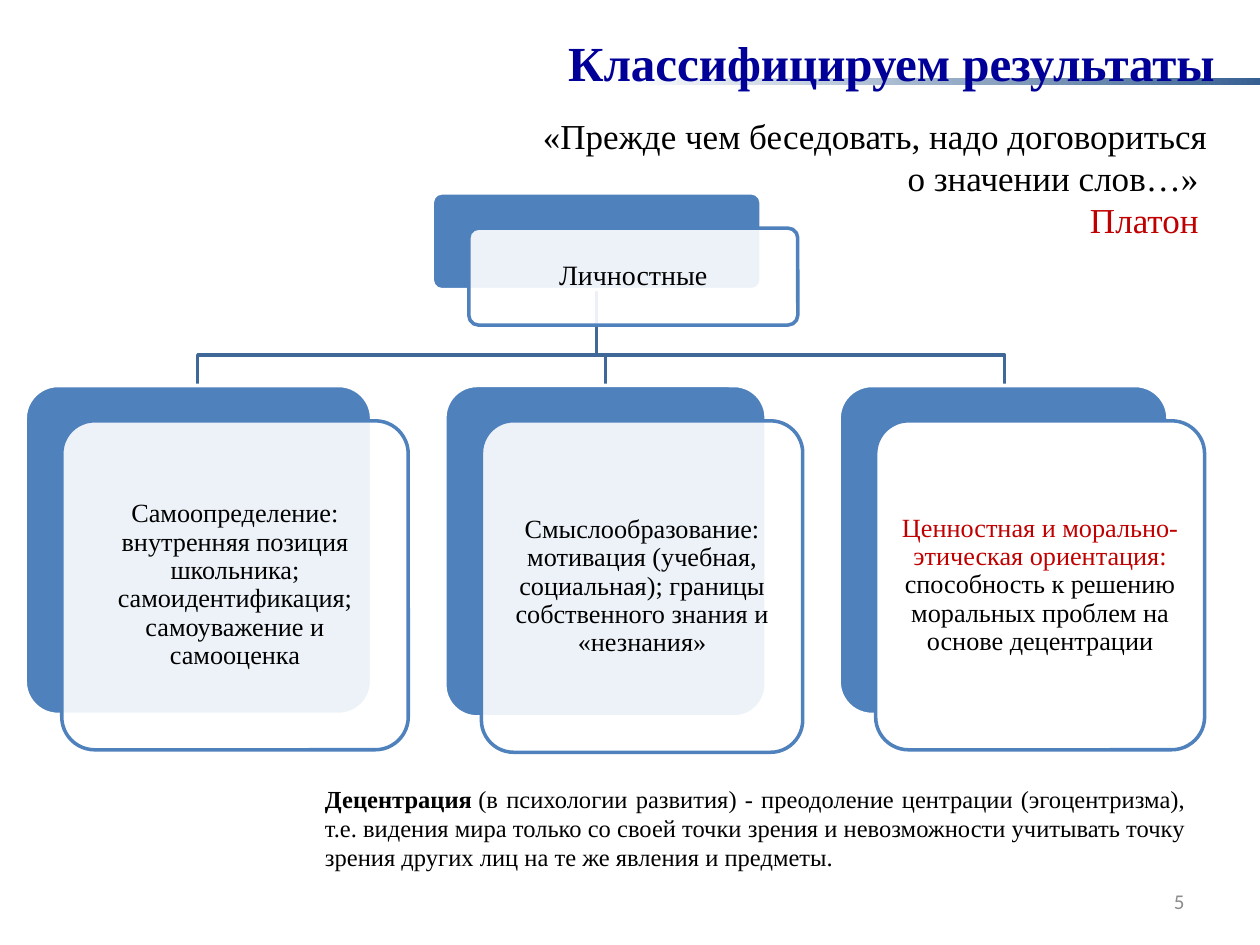
from pptx import Presentation
from pptx.dml.color import RGBColor
from pptx.enum.shapes import MSO_SHAPE
from pptx.enum.text import MSO_ANCHOR, PP_ALIGN
from pptx.oxml.ns import qn
from pptx.util import Pt
from lxml.etree import SubElement

COLORS = {
    "blue": "4F81BD", "connector": "3F6797", "bar": "376092", "white": "FFFFFF",
    "black": "000000", "red": "C00000", "navy": "000099", "grey": "8C8C8C",
}
SERIF = "Times New Roman"


def write(frame, paragraphs, size, align, font=SERIF, line_spacing=None):
    """Fill a text frame; each paragraph is a list of (text, colour, bold) runs."""
    frame.word_wrap = True
    for index, runs in enumerate(paragraphs):
        paragraph = frame.paragraphs[0] if index == 0 else frame.add_paragraph()
        paragraph.alignment = align
        paragraph.line_spacing = line_spacing
        for text, color, bold in runs:
            run = paragraph.add_run()
            run.text = text
            run.font.name = font
            run.font.size = Pt(size)
            run.font.bold = bold
            run.font.color.rgb = RGBColor.from_string(COLORS[color])


def add_panel(left, top, width, height, fill, line):
    shape = slide.shapes.add_shape(
        MSO_SHAPE.ROUNDED_RECTANGLE, Pt(left), Pt(top), Pt(width), Pt(height))
    shape.adjustments[0] = 0.1
    shape.shadow.inherit = False
    shape.fill.solid()
    shape.fill.fore_color.rgb = RGBColor.from_string(COLORS[fill])
    shape.line.color.rgb = RGBColor.from_string(COLORS[line])
    shape.line.width = Pt(2)
    return shape


presentation = Presentation()
presentation.slide_width = Pt(720)
presentation.slide_height = Pt(540)
slide = presentation.slides.add_slide(presentation.slide_layouts[6])

# Diagram: the root card first, then its three children
# (left, top, width, height, text size, inset, see-through, runs)
cards = [
    (247, 110.2, 188, 55.4, 16, 5, True, [("Личностные", "black", False)]),
    (14.4, 220.3, 198, 188, 15, 4.3, True, [
        ("Самоопределение: внутренняя позиция школьника; самоидентификация; "
         "самоуважение и самооценка", "black", False)]),
    (254.2, 220.3, 183.6, 189.4, 15, 4.3, True, [
        ("Смыслообразование: мотивация (учебная, социальная); границы "
         "собственного знания и «незнания»", "black", False)]),
    (479.5, 220.3, 188, 188, 15, 4.3, False, [
        ("Ценностная и морально-этическая ориентация: ", "red", False),
        ("способность к решению моральных проблем на основе\u00a0децентрации",
         "black", False)]),
]
FRONT_SHIFT_X, FRONT_SHIFT_Y = 20.9, 20.2
BUS_Y = 203

root_left, root_top, root_width, root_height = cards[0][:4]
root_x, root_bottom = root_left + root_width / 2, root_top + root_height
for left, top, width, *_ in reversed(cards[1:]):
    child_x = left + width / 2
    builder = slide.shapes.build_freeform(root_x, root_bottom, scale=Pt(1))
    builder.add_line_segments(
        [(root_x, BUS_Y), (child_x, BUS_Y), (child_x, top)], close=False)
    branch = builder.convert_to_shape()
    branch.shadow.inherit = False
    branch.fill.background()
    branch.line.color.rgb = RGBColor.from_string(COLORS["connector"])
    branch.line.width = Pt(2)

for left, top, width, height, size, inset, see_through, runs in cards:
    add_panel(left, top, width, height, "blue", "white")
    front = add_panel(left + FRONT_SHIFT_X, top + FRONT_SHIFT_Y, width, height,
                      "white", "blue")
    if see_through:
        fill_color = front.fill._xPr.find(qn("a:solidFill")).find(qn("a:srgbClr"))
        SubElement(fill_color, qn("a:alpha")).set("val", "90000")
    frame = front.text_frame
    frame.vertical_anchor = MSO_ANCHOR.MIDDLE
    frame.margin_left = frame.margin_right = Pt(inset)
    frame.margin_top = frame.margin_bottom = Pt(inset)
    write(frame, [runs], size, PP_ALIGN.CENTER, line_spacing=0.9)

# Bar behind the title, fading out to the left
bar = slide.shapes.add_shape(MSO_SHAPE.RECTANGLE, Pt(354), Pt(44.8), Pt(366), Pt(3.6))
bar.shadow.inherit = False
bar.line.fill.background()
bar.fill.gradient()
bar.fill.gradient_angle = 0
for stop, color, position in zip(bar.fill.gradient_stops, ("white", "bar"), (0, 1)):
    stop.color.rgb = RGBColor.from_string(COLORS[color])
    stop.position = position

# Free text: (left, top, width, height, size, alignment, font, anchor, paragraphs)
texts = [
    (76.3, 62, 620.7, 101.5, 20, PP_ALIGN.RIGHT, SERIF, MSO_ANCHOR.TOP, [
        [("«Прежде чем беседовать, надо договориться", "black", False)],
        [("о значении слов…» ", "black", False)],
        [("Платон ", "red", False)]]),
    (48.2, 15.1, 653, 41, 28, PP_ALIGN.RIGHT, SERIF, MSO_ANCHOR.TOP, [
        [("Классифицируем результаты", "navy", True)]]),
    (178.6, 444.2, 506, 58.3, 14, PP_ALIGN.JUSTIFY, SERIF, MSO_ANCHOR.TOP, [
        [("Децентрация\u00a0", "black", True),
         ("(в психологии развития) - преодоление центрации (эгоцентризма), "
          "т.е. видения мира только со своей точки зрения и невозможности "
          "учитывать точку зрения других лиц на те же явления и предметы.",
          "black", False)]]),
    (516, 500.5, 168, 28.8, 12, PP_ALIGN.RIGHT, "Calibri", MSO_ANCHOR.MIDDLE, [
        [("5", "grey", False)]]),
]
for left, top, width, height, size, align, font, anchor, paragraphs in texts:
    box = slide.shapes.add_textbox(Pt(left), Pt(top), Pt(width), Pt(height))
    box.text_frame.vertical_anchor = anchor
    write(box.text_frame, paragraphs, size, align, font)

presentation.save("out.pptx")
